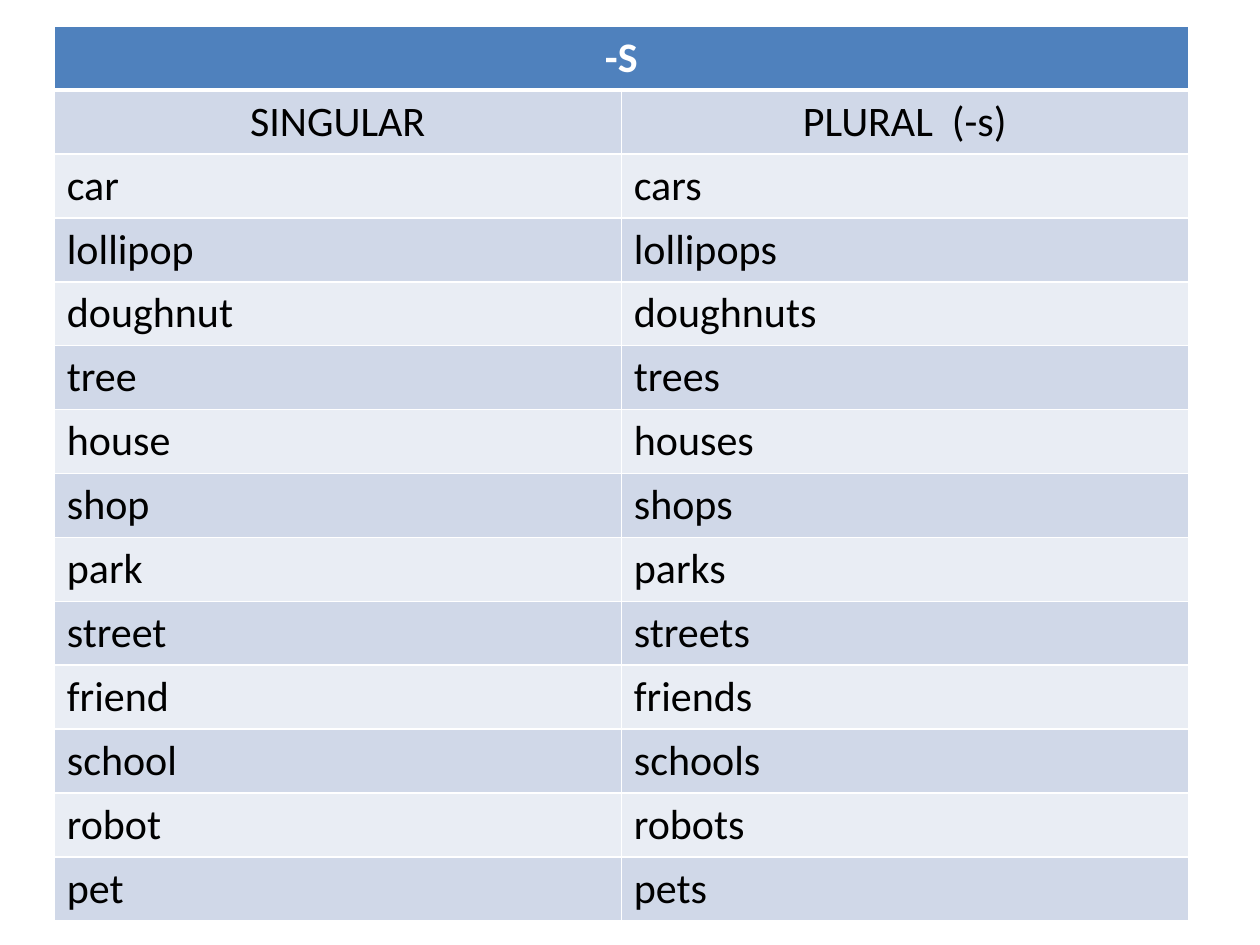
from lxml.etree import SubElement as Sub
from pptx import Presentation
from pptx.dml.color import RGBColor as Rgb
from pptx.enum.text import PP_ALIGN as Align
from pptx.oxml.ns import qn
from pptx.util import Pt

HUES = {"head": "4F81BD", "dark": "D0D8E8", "light": "E9EDF4",
        "white": "FFFFFF", "black": "000000"}
WORDS = ["car", "lollipop", "doughnut", "tree", "house", "shop",
         "park", "street", "friend", "school", "robot", "pet"]
ROW = 36
COL = 324


def write(cell, text, hue="black", bold=False, align=Align.LEFT):
    para = cell.text_frame.paragraphs[0]
    para.alignment = align
    run = para.add_run()
    run.text = text
    font = run.font
    font.name = "Calibri"
    font.size = Pt(24)
    font.bold = bold
    font.color.rgb = Rgb.from_string(HUES[hue])


def edge(cell, top=1, base=1):
    props = cell._tc.get_or_add_tcPr()
    for side, width in (("L", 1), ("R", 1), ("T", top), ("B", base)):
        line = Sub(props, qn(f"a:ln{side}"), w=str(Pt(width)))
        fill = Sub(line, qn("a:solidFill"))
        Sub(fill, qn("a:srgbClr"), val=HUES["white"])


def paint(cell, hue):
    cell.fill.solid()
    cell.fill.fore_color.rgb = Rgb.from_string(HUES[hue])


def style(grid):
    for num, row in enumerate(grid.rows):
        row.height = Pt(ROW)
        hue = "head" if num == 0 else "dark" if num % 2 else "light"
        for cell in row.cells:
            edge(cell, top=3 if num == 1 else 1, base=3 if num == 0 else 1)
            paint(cell, hue)


def add_grid(slide):
    count = len(WORDS) + 2
    grid = slide.shapes.add_table(count, 2, Pt(31), Pt(15),
                                  Pt(2 * COL), Pt(count * ROW)).table
    style(grid)
    grid.cell(0, 0).merge(grid.cell(0, 1))
    write(grid.cell(0, 0), "-S", hue="white", bold=True, align=Align.CENTER)
    for col, text in enumerate(("SINGULAR", "PLURAL  (-s)")):
        write(grid.cell(1, col), text, align=Align.CENTER)
    for row, word in enumerate(WORDS, 2):
        write(grid.cell(row, 0), word)
        write(grid.cell(row, 1), word + "s")


def main():
    deck = Presentation()
    deck.slide_width = Pt(720)
    deck.slide_height = Pt(540)
    slide = deck.slides.add_slide(deck.slide_layouts[6])
    add_grid(slide)
    deck.save("out.pptx")


if __name__ == "__main__":
    main()
